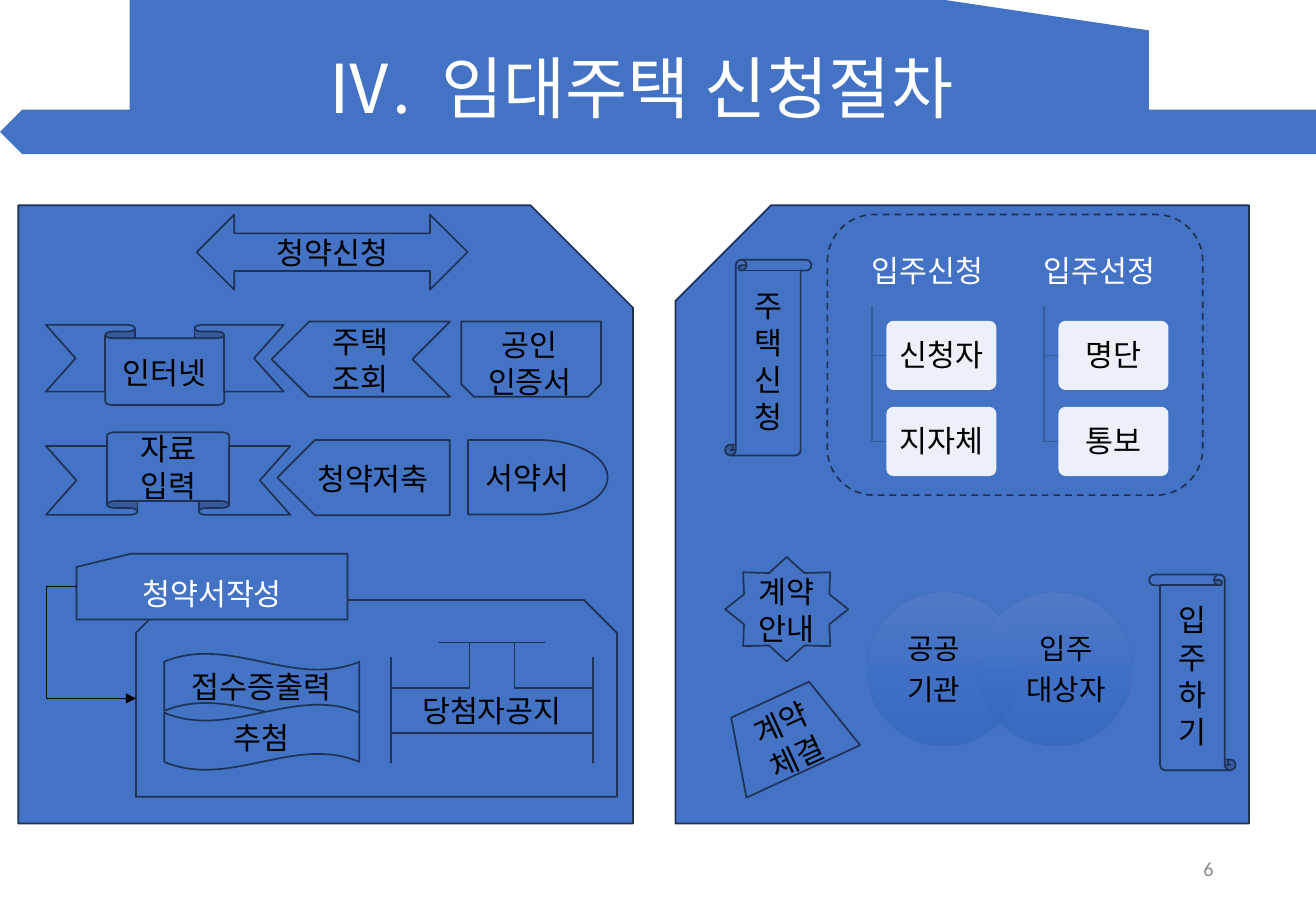
from lxml.etree import SubElement
from pptx import Presentation
from pptx.dml.color import RGBColor
from pptx.enum.dml import MSO_LINE
from pptx.enum.shapes import MSO_CONNECTOR, MSO_SHAPE as Preset
from pptx.enum.text import MSO_ANCHOR as Anchor, PP_ALIGN as Align
from pptx.oxml import parse_xml
from pptx.oxml.ns import nsdecls, qn
from pptx.util import Pt

COLORS = {"blue": "4472C4", "outline": "1E3256", "stem": "365B9D", "black": "000000",
          "white": "FFFFFF", "gray": "8C8C8C"}
CIRCLE_STOPS = {0: "6183CB", 50: "3E70CA", 100: "3062BB"}
KOREAN, LATIN = "Noto Sans CJK KR", "Calibri"
LINE_HEIGHT = 1.22


def rgb(name):
    return RGBColor.from_string(COLORS[name])


def add_run(paragraph, text, size, color, font, gap=0):
    run = paragraph.add_run()
    run.text = text
    run.font.size, run.font.name = Pt(size), font
    run.font.color.rgb = rgb(color)
    properties = run.font._element
    SubElement(properties, qn("a:ea")).set("typeface", KOREAN)
    if gap:
        properties.set("spc", str(gap * 100))


def write(shape, lines, size=18, color="black", font=KOREAN, align=Align.CENTER,
          anchor=Anchor.MIDDLE, spacing=1, after=0, insets=None):
    """Each line is a paragraph, given as a string or a list of (text, gap) runs."""
    frame = shape.text_frame
    frame.word_wrap, frame.vertical_anchor = True, anchor
    if insets:
        frame.margin_left = frame.margin_right = Pt(insets[0])
        frame.margin_top = frame.margin_bottom = Pt(insets[1])
    for index, line in enumerate(lines):
        paragraph = frame.add_paragraph() if index else frame.paragraphs[0]
        paragraph.alignment = align
        paragraph.line_spacing = Pt(round(size * LINE_HEIGHT * spacing, 1))
        paragraph.space_before, paragraph.space_after = Pt(0), Pt(after)
        for text, gap in [(line, 0)] if isinstance(line, str) else line:
            add_run(paragraph, text, size, color, font, gap)


def add_label(shapes, box, lines, **style):
    label = shapes.add_textbox(*map(Pt, box))
    write(label, lines, **style)
    return label


def add_block(shapes, preset, box, lines=(), flip=None, fill="blue", line="outline",
              adjust=(), **style):
    block = shapes.add_shape(preset, *map(Pt, box))
    block.shadow.inherit = False
    for index, value in enumerate(adjust):
        block.adjustments[index] = value
    if flip:
        block.element.spPr.get_or_add_xfrm().set(flip, "1")
    block.fill.solid()
    block.fill.fore_color.rgb = rgb(fill)
    if line:
        block.line.color.rgb, block.line.width = rgb(line), Pt(1)
    else:
        block.line.fill.background()
    write(block, lines, **style)
    return block


def add_bent_arrow(shapes, start, end, bend):
    arrow = shapes.add_connector(MSO_CONNECTOR.ELBOW, *map(Pt, start + end))
    arrow.line.color.rgb, arrow.line.width = rgb("black"), Pt(0.5)
    properties = arrow._element.spPr
    guide = SubElement(properties.find(qn("a:prstGeom")).get_or_add_avLst(), qn("a:gd"))
    guide.set("name", "adj1")
    guide.set("fmla", f"val {round(bend * 100000)}")
    SubElement(arrow.line._get_or_add_ln(), qn("a:tailEnd")).set("type", "triangle")
    SubElement(properties, qn("a:effectLst"))


def add_stem(shapes, left, top, right, bottom):
    builder = shapes.build_freeform(Pt(left), Pt(top))
    builder.add_line_segments([(Pt(left), Pt(bottom)), (Pt(right), Pt(bottom))], close=False)
    stem = builder.convert_to_shape()
    stem.shadow.inherit = False
    stem.fill.background()
    stem.line.color.rgb, stem.line.width = rgb("stem"), Pt(1)


def add_card_column(shapes, left, heading, cards):
    style = dict(adjust=[0.1], line=None, spacing=0.9, after=6.3, insets=(4, 3))
    add_block(shapes, Preset.ROUNDED_RECTANGLE, (left, 140.4, 81.4, 41), [heading],
              color="white", **style)
    for index, text in enumerate(cards):
        top = 190.2 + 51 * index
        add_stem(shapes, left + 8, 181.4, left + 16.4, top + 20.5)
        card = add_block(shapes, Preset.ROUNDED_RECTANGLE, (left + 16.4, top, 65.2, 41),
                         [text], fill="white", **style)
        fill_color = card.element.spPr.find(qn("a:solidFill"))[0]
        SubElement(fill_color, qn("a:alpha")).set("val", "90000")


def add_circle(shapes, left, text_left, lines):
    circle = add_block(shapes, Preset.OVAL, (left, 351.4, 90.8, 90.8), line=None)
    stops = "".join(f'<a:gs pos="{position * 1000}"><a:srgbClr val="{color}">'
                    '<a:alpha val="50000"/></a:srgbClr></a:gs>'
                    for position, color in CIRCLE_STOPS.items())
    properties = circle.element.spPr
    properties.replace(properties.find(qn("a:solidFill")), parse_xml(
        f'<a:gradFill {nsdecls("a")}><a:gsLst>{stops}</a:gsLst>'
        '<a:lin ang="5400000" scaled="0"/></a:gradFill>'))
    add_label(shapes, (text_left, 362.2, 52.6, 69.8), lines, size=17, font=LATIN,
              spacing=0.9, after=6, insets=(0, 0))


def add_header(slide):
    add_block(slide.shapes, Preset.PENTAGON, (0, 65, 780, 26.4), flip="flipH", line=None)
    banner = add_block(slide.shapes, Preset.FLOWCHART_CARD, (76.8, 0, 604.2, 90),
                       flip="flipH", line=None)
    title = slide.shapes.title
    title.left, title.top, title.width, title.height = map(Pt, (76.8, 19.4, 604.2, 68.4))
    write(title, [[("Ⅳ.", 0), (" ", 9), ("임대주택 신청절차", 0)]], size=40,
          color="white", spacing=0.9)
    banner.element.addnext(title.element)
    add_label(slide.shapes, (550.8, 500.4, 175.7, 28.8), ["6"], size=12, color="gray",
              font=LATIN, align=Align.RIGHT)


def add_application_panel(shapes):
    add_block(shapes, Preset.SNIP_1_RECTANGLE, (10.8, 121.7, 364.4, 366.5))
    add_block(shapes, Preset.SNIP_2_SAME_RECTANGLE, (80.6, 355.7, 285.1, 116.6))
    add_block(shapes, Preset.LEFT_RIGHT_ARROW, (116.6, 127.2, 160.6, 44.6), ["청약신청"])
    # First row of steps
    add_block(shapes, Preset.DOWN_RIBBON, (27.2, 192.6, 141, 47.5), ["인터넷"])
    add_block(shapes, Preset.CHEVRON, (161, 190.6, 105.8, 44.6), ["주택", "조회"], flip="flipH")
    add_block(shapes, Preset.SNIP_2_SAME_RECTANGLE, (273.4, 190.6, 82.8, 44.6), flip="flipV")
    add_label(shapes, (277, 189.4, 74.2, 51.1), ["공인", "인증서"], anchor=Anchor.TOP)
    # Second row of steps
    add_block(shapes, Preset.UP_RIBBON, (27.2, 256.2, 144.9, 49), ["자료", "입력"])
    add_block(shapes, Preset.PENTAGON, (164.4, 260.8, 102.2, 44.6), ["청약저축"], flip="flipH")
    add_block(shapes, Preset.FLOWCHART_DELAY, (277.4, 260.8, 82.8, 44.2), ["서약서"])
    # Form and result
    add_block(shapes, Preset.FLOWCHART_CARD, (45.4, 328.3, 160.6, 38.9), ["청약서작성"],
              color="white")
    add_block(shapes, Preset.WAVE, (97.4, 387.4, 115.6, 38.9), ["접수증출력"])
    add_block(shapes, Preset.WAVE, (97.4, 417.6, 115.6, 38.9), ["추첨"], flip="flipH")
    add_block(shapes, Preset.LEFT_RIGHT_UP_ARROW, (231.8, 380.9, 119.6, 71.3), ["당첨자공지"],
              adjust=[0.375, 0.437, 0])
    add_bent_arrow(shapes, (45.4, 347.8), (80.6, 414), bend=-0.51)


def add_move_in_panel(shapes):
    add_block(shapes, Preset.SNIP_1_RECTANGLE, (400.4, 121.7, 340, 366.5), flip="flipH")
    # Application and selection
    frame = add_block(shapes, Preset.ROUNDED_RECTANGLE, (490.4, 127.2, 222.5, 166.3))
    frame.line.dash_style = MSO_LINE.DASH
    add_block(shapes, Preset.VERTICAL_SCROLL, (429.8, 154, 51.2, 116), list("주택신청"))
    add_card_column(shapes, 509, "입주신청", ["신청자", "지자체"])
    add_card_column(shapes, 611, "입주선정", ["명단", "통보"])
    # Contract and move-in
    add_block(shapes, Preset.STAR_8_POINT, (429.8, 330.2, 73, 61.9), ["계약", "안내"])
    contract = add_block(shapes, Preset.TRAPEZOID, (429.2, 412.6, 74.2, 46.8), ["계약", "체결"])
    contract.rotation = 335.2
    add_circle(shapes, 514, 527, ["공공", "기관"])
    add_circle(shapes, 579.8, 605.6, ["입주", "대상자"])
    add_block(shapes, Preset.VERTICAL_SCROLL, (681.2, 340.6, 51.2, 116), list("입주하기"),
              flip="flipH")


def main():
    presentation = Presentation()
    presentation.slide_width, presentation.slide_height = Pt(780), Pt(540)
    slide = presentation.slides.add_slide(presentation.slide_layouts[5])
    add_header(slide)
    add_application_panel(slide.shapes.add_group_shape().shapes)
    add_move_in_panel(slide.shapes.add_group_shape().shapes)
    presentation.save("out.pptx")


if __name__ == "__main__":
    main()
